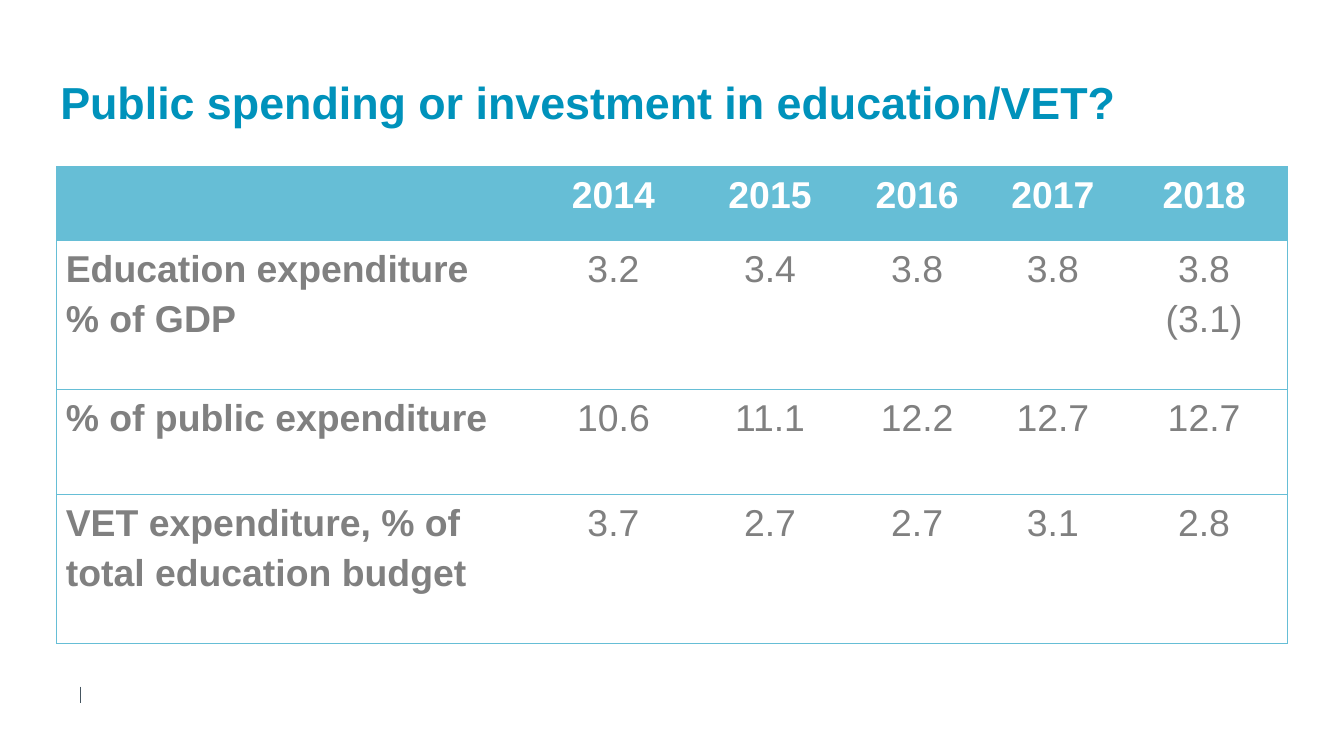
from lxml.etree import SubElement
from pptx import Presentation
from pptx.dml.color import RGBColor
from pptx.enum.shapes import MSO_CONNECTOR
from pptx.enum.text import MSO_ANCHOR, PP_ALIGN
from pptx.oxml.ns import qn
from pptx.util import Inches, Pt

TEAL = "66BED6"
TITLE_BLUE = "0092BB"
GREY = "808080"
WHITE = "FFFFFF"
RULE_GREY = "455560"

COLUMN_WIDTHS = [3.57, 1.15, 1.18, 1.01, 1.01, 1.24]
ROW_HEIGHTS = [0.55, 1.11, 0.78, 1.11]
ROWS = [
    ["", "2014", "2015", "2016", "2017", "2018"],
    ["Education expenditure\v% of GDP", "3.2", "3.4", "3.8", "3.8", "3.8\n(3.1)"],
    ["% of public expenditure", "10.6", "11.1", "12.2", "12.7", "12.7"],
    ["VET expenditure, % of total education budget", "3.7", "2.7", "2.7", "3.1", "2.8"],
]


def color(hex_value):
    return RGBColor.from_string(hex_value)


def write_text(frame, text, *, size, hex_color, bold=False,
               align=PP_ALIGN.LEFT, line_spacing=1.0):
    frame.text = text
    frame.word_wrap = True
    for paragraph in frame.paragraphs:
        paragraph.alignment = align
        paragraph.line_spacing = line_spacing
        paragraph.space_before = Pt(0)
        for run in paragraph.runs:
            run.font.name = "Arial"
            run.font.size = Pt(size)
            run.font.bold = bold
            run.font.color.rgb = color(hex_color)


def set_borders(cell, visible_sides):
    """Draw the given sides (of L, R, T, B) and hide the others."""
    properties = cell._tc.get_or_add_tcPr()
    for side in "LRTB":
        line = SubElement(properties, qn(f"a:ln{side}"), w=str(Pt(0.5)))
        if side in visible_sides:
            fill = SubElement(line, qn("a:solidFill"))
            SubElement(fill, qn("a:srgbClr"), val=TEAL)
        else:
            SubElement(line, qn("a:noFill"))


def add_title(slide, text):
    title = slide.shapes.title
    title.left, title.top = Inches(0), Inches(0.55)
    title.width, title.height = Inches(8.75), Inches(0.41)
    frame = title.text_frame
    frame.margin_left = frame.margin_right = 0
    frame.margin_top = frame.margin_bottom = 0
    frame.vertical_anchor = MSO_ANCHOR.BOTTOM
    write_text(frame, text, size=24, hex_color=TITLE_BLUE, bold=True,
               align=PP_ALIGN.CENTER, line_spacing=0.9)


def format_cell(cell, text, is_header, is_first, is_last):
    cell.margin_left = cell.margin_right = Inches(0.07)
    cell.margin_top = cell.margin_bottom = 0
    cell.vertical_anchor = MSO_ANCHOR.TOP
    write_text(cell.text_frame, text, size=20,
               hex_color=WHITE if is_header else GREY,
               bold=is_header or is_first,
               align=PP_ALIGN.LEFT if is_first else PP_ALIGN.CENTER,
               line_spacing=1.2)
    set_borders(cell, "TB" + "L" * is_first + "R" * is_last)
    if is_header:
        cell.fill.solid()
        cell.fill.fore_color.rgb = color(TEAL)
    else:
        cell.fill.background()


def add_spending_table(slide):
    frame = slide.shapes.add_table(
        len(ROWS), len(COLUMN_WIDTHS), Inches(0.42), Inches(1.24),
        Inches(sum(COLUMN_WIDTHS)), Inches(sum(ROW_HEIGHTS)))
    table = frame.table
    table.horz_banding = False
    for column, width in zip(table.columns, COLUMN_WIDTHS):
        column.width = Inches(width)
    for row, height in zip(table.rows, ROW_HEIGHTS):
        row.height = Inches(height)
    for row_index, texts in enumerate(ROWS):
        for column_index, text in enumerate(texts):
            format_cell(table.cell(row_index, column_index), text,
                        is_header=row_index == 0,
                        is_first=column_index == 0,
                        is_last=column_index == len(texts) - 1)


def add_footer_rule(slide):
    rule = slide.shapes.add_connector(
        MSO_CONNECTOR.STRAIGHT, Inches(0.6), Inches(5.11), Inches(0.6), Inches(5.23))
    rule.line.color.rgb = color(RULE_GREY)
    rule.line.width = Pt(0.25)
    SubElement(rule._element.spPr, qn("a:effectLst"))


def main():
    presentation = Presentation()
    presentation.slide_width = Inches(10)
    presentation.slide_height = Inches(10 * 9 / 16)
    slide = presentation.slides.add_slide(presentation.slide_layouts[5])
    add_footer_rule(slide)
    add_title(slide, "Public spending or investment in education/VET?")
    add_spending_table(slide)
    presentation.save("out.pptx")


if __name__ == "__main__":
    main()
